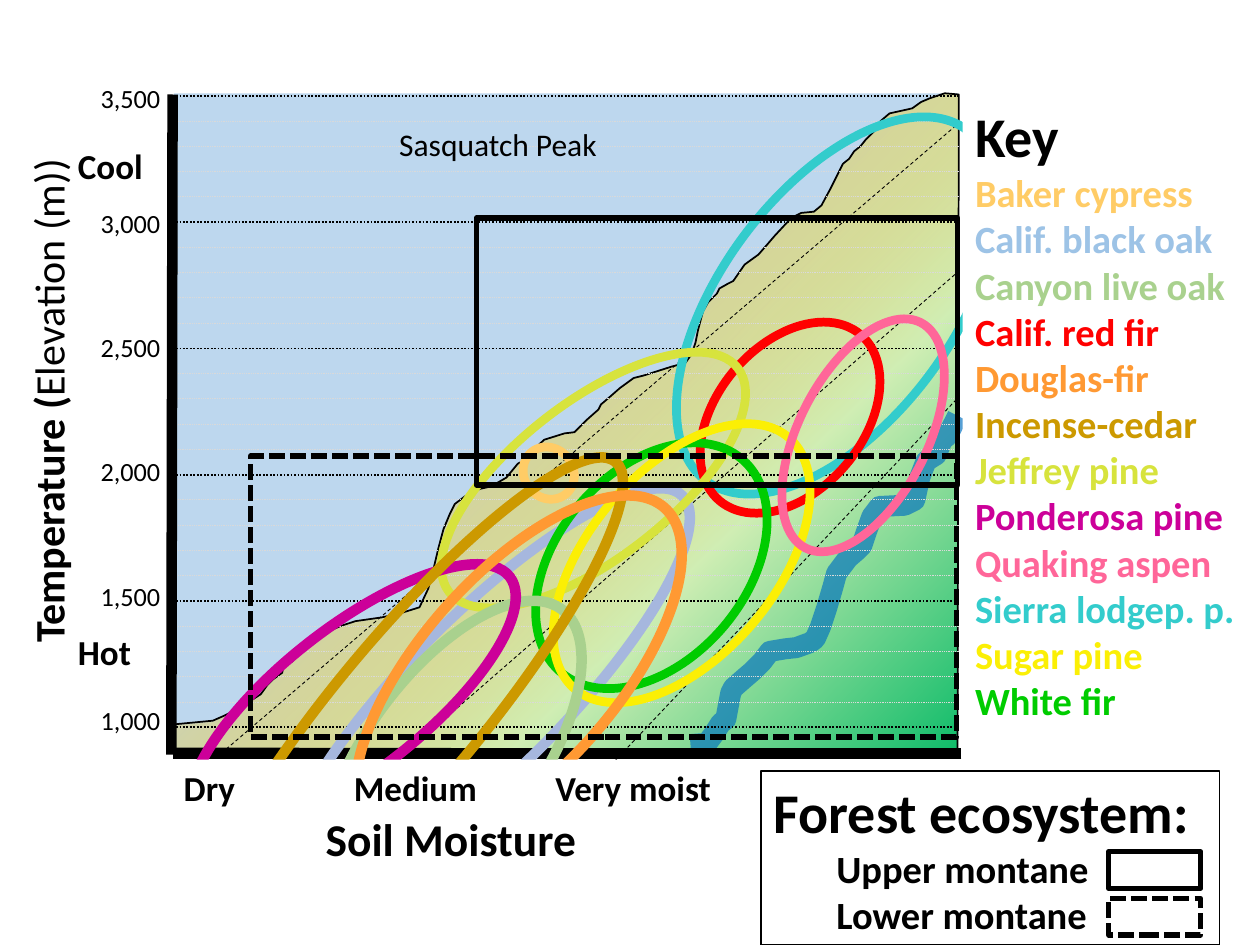
import pptx
import pptx.dml.color
import pptx.enum.dml
import pptx.enum.shapes
import pptx.enum.text
import pptx.oxml.ns
import pptx.util
from lxml import etree

SHAPE = pptx.enum.shapes.MSO_SHAPE
DASH = pptx.enum.dml.MSO_LINE
ALIGN = pptx.enum.text.PP_ALIGN
ANCHOR = pptx.enum.text.MSO_ANCHOR
qn = pptx.oxml.ns.qn

# The slide is a grid of 100 columns and 75 rows
COLUMNS, ROWS = 100, 75
CELL = pptx.util.Inches(10) // COLUMNS
LEFT, RIGHT, TOP, BOTTOM = 13.7, 76.1, 7.6, 59.8


def cells(count):
    return pptx.util.Emu(round(count * CELL))


def color(value):
    return pptx.dml.color.RGBColor.from_string(value)


def set_alpha(element, percent):
    etree.SubElement(element, qn("a:alpha"), val=str(percent * 1000))


class Diagram:
    font, ink, paper = "Calibri", "000000", "FFFFFF"

    def __init__(self, slide):
        self.shapes = slide.shapes

    def style(self, item, fill=None, line=None, width=1, dash=None):
        item.shadow.inherit = False
        if fill:
            item.fill.solid()
            item.fill.fore_color.rgb = color(fill)
        else:
            item.fill.background()
        if line:
            self.stroke(item.line, line, width, dash)
        else:
            item.line.fill.background()
        return item

    def stroke(self, line, value, width, dash=None):
        line.color.rgb = color(value)
        line.width = pptx.util.Pt(width)
        if dash:
            line.dash_style = dash

    def shape(self, kind, left, top, across, down, turn=0, **look):
        item = self.shapes.add_shape(kind, *map(cells, (left, top, across, down)))
        item.rotation = turn
        return self.style(item, **look)

    def line(self, x1, y1, x2, y2, value=ink, width=1, dash=None):
        item = self.shapes.add_connector(
            pptx.enum.shapes.MSO_CONNECTOR.STRAIGHT, *map(cells, (x1, y1, x2, y2)))
        self.stroke(item.line, value, width, dash)
        etree.SubElement(item._element.spPr, qn("a:effectLst"))

    def outline(self, points, close, **look):
        corners = [(cells(x), cells(y)) for x, y in points]
        builder = self.shapes.build_freeform(*corners[0], scale=1.0)
        builder.add_line_segments(corners[1:], close=close)
        return self.style(builder.convert_to_shape(), **look)

    def text(self, left, top, across, down, paras, align=ALIGN.LEFT, anchor=ANCHOR.TOP, turn=0):
        """Each paragraph is (runs, size, color, level); a run is (words, bold)."""
        box = self.shapes.add_textbox(*map(cells, (left, top, across, down)))
        box.rotation = turn
        frame = box.text_frame
        frame.word_wrap = True
        frame.vertical_anchor = anchor
        for index, (runs, size, value, level) in enumerate(paras):
            para = frame.add_paragraph() if index else frame.paragraphs[0]
            para.alignment, para.level = align, level
            para.font.name, para.font.size = self.font, pptx.util.Pt(size)
            para.font.color.rgb = color(value)
            for words, bold in runs:
                span = para.add_run()
                span.text, span.font.bold = words, bold

    def label(self, left, middle, across, words, size, bold=False, align=ALIGN.LEFT):
        """One line of text centred on a row."""
        self.text(left, middle - 2.5, across, 5, [([(words, bold)], size, self.ink, 0)],
                  align, ANCHOR.MIDDLE)


MOUNTAIN = [
    (13.7, 59.4), (13.7, 57.5), (16.9, 57.2), (17.8, 56.8), (18.6, 56.4), (19, 56.2), (19.6, 55.8),
    (20.7, 55.1), (21.2, 54.4), (21.7, 53.9), (22.4, 53.4), (22.5, 52.9), (23.2, 52.5), (23.7, 51.9),
    (24.9, 50.9), (26.1, 50.1), (27, 49.7), (28.2, 49.3), (30.3, 49), (31.7, 48.7), (33.3, 48.2),
    (34, 46.7), (34.4, 45.2), (34.8, 43.5), (35.2, 42), (35.7, 40.8), (36.1, 40), (36.9, 39.4),
    (38.1, 38.8), (39, 38.6), (40.2, 37.9), (41.1, 36.8), (41.5, 36.6), (42.1, 35.9), (43.2, 34.9),
    (44.8, 34.4), (45.6, 34.3), (46.6, 33.3), (47.5, 32.5), (47.7, 32.1), (48.4, 31.5), (49.2, 30.8),
    (50.3, 30), (51.1, 29.8), (53.3, 29.1), (54.4, 28.8), (54.9, 28.1), (55.2, 27.2), (55.4, 26.2),
    (55.8, 24.7), (56.2, 24), (56.9, 23.3), (57.1, 22.9), (57.8, 22.5), (58.2, 22.3), (59.1, 21),
    (60.2, 20.2), (60.9, 19.4), (61.5, 18.7), (62.8, 17.3), (63.6, 16.9), (64.6, 16.8), (65.2, 16.3),
    (65.9, 15), (66.5, 13.8), (66.9, 13), (67.4, 12.6), (67.8, 12), (68.3, 11.6), (68.7, 11.1),
    (69.5, 10.3), (69.9, 9.6), (70.6, 9), (72.4, 8.6), (73.1, 8.1), (73.8, 7.8), (75, 7.4),
    (76.1, 7.5), (76, 59.5)]

RIVER = [
    (54.8, 59.1), (56.1, 59), (56.7, 58.2), (57.2, 57.4), (57.6, 57.1), (58, 55), (58.2, 54.6),
    (59, 53.9), (59.7, 53.3), (60.5, 52.5), (61.1, 51.7), (62.3, 51.5), (63.2, 51.4), (64.3, 51),
    (64.7, 50.7), (65.1, 49.8), (65.6, 48.3), (66.1, 46.6), (66.4, 45.5), (67.3, 44.3), (68, 43.7),
    (68.4, 43.3), (68.8, 42.1), (69.2, 41), (69.8, 40.2), (71.8, 40.1), (72.6, 39.7), (73, 37.9),
    (73.5, 36.6), (74.3, 36.1), (74.8, 34.9), (75.2, 34.6), (75.6, 33.8), (76, 33)]

# Left, top, width, height, turn, colour, line width
TREE_RANGES = [
    (32.4, 32.9, 12.3, 44.2, 44.9, "A6B7DE", 6), (57.2, 6.9, 18.4, 34.7, 36.6, "33CCCC", 5),
    (56.9, 24.5, 11.6, 17.3, 40.4, "FF0000", 5), (40.9, 23.6, 12.4, 29, 52.2, "D7E33D", 5),
    (44.2, 33.8, 15, 22.2, 40.4, "00CC00", 5), (41.4, 35.6, 4.3, 3.9, 51.4, "FFCC66", 5),
    (46.7, 31.6, 14.8, 26.2, 40.4, "FBEF05", 5), (63.4, 24.5, 10.2, 20.1, 27.1, "FF6699", 5),
    (29.1, 45.5, 13.6, 29.2, 36.5, "A9D18E", 6), (22.3, 39.7, 11.4, 31.6, 52, "CC0099", 6),
    (26.6, 30.7, 11.6, 51.4, 39.8, "CC9900", 6), (33.4, 35.9, 15.5, 34.9, 41.6, "FF9933", 6)]

KEY = [
    ("Baker cypress", "FFCC66"), ("Calif. black oak", "9DC3E6"), ("Canyon live oak", "A9D18E"),
    ("Calif. red fir", "FF0000"), ("Douglas-fir", "FF9933"), ("Incense-cedar", "CC9900"),
    ("Jeffrey pine", "D7E33D"), ("Ponderosa pine", "CC0099"), ("Quaking aspen", "FF6699"),
    ("Sierra lodgep. p.", "33CCCC"), ("Sugar pine", "FBEF05"), ("White fir", "00CC00")]


def draw_land(art):
    # Sky, mountain and river
    art.shape(SHAPE.RECTANGLE, 13.8, 7.4, 62.2, 52.1, fill="BDD7EE")
    mountain = art.outline(MOUNTAIN, True, line=art.ink)
    mountain.fill.gradient()
    mountain.fill.gradient_angle = 315
    stops = mountain._element.spPr.find(qn("a:gradFill")).find(qn("a:gsLst"))
    for stop in list(stops):
        stops.remove(stop)
    for place, value, alpha in [(0, "FFD966", 100), (36, "FFC000", 12),
                                (69, "D1EEB4", 100), (100, "10BC6A", 100)]:
        stop = etree.SubElement(stops, qn("a:gs"), pos=str(place * 1000))
        set_alpha(etree.SubElement(stop, qn("a:srgbClr"), val=value), alpha)
    river = art.outline(RIVER, False, line="0070C0", width=12)
    set_alpha(next(river._element.spPr.find(qn("a:ln")).iter(qn("a:srgbClr"))), 66)


def draw_axes(art):
    # Grid lines every 100 m, darker every 500 m
    for step in range(27):
        row = TOP + 2.005 * step
        value, width = (art.ink, 1) if step % 5 == 0 else ("D9D9D9", 0.5)
        art.line(LEFT, row, RIGHT, row, value, width, DASH.ROUND_DOT)
    art.line(RIGHT + 0.2, BOTTOM, LEFT, BOTTOM, width=6)
    art.line(LEFT, TOP - 0.1, LEFT - 0.1, BOTTOM + 0.1, width=6)
    # Axis words
    for step in range(6):
        art.label(5.2, 7.8 + 9.87 * step, 8.5, f"{3500 - 500 * step:,}", 15, align=ALIGN.RIGHT)
    for words, row in [("Cool", 13.1), ("Hot", 51.7)]:
        art.label(5.2, row, 8.5, words, 20, True)
    title = [("Temperature (", True), ("Elevation (m))", False)]
    art.text(-22.1, 29.3, 51.8, 5, [(title, 24, art.ink, 0)], ALIGN.CENTER, turn=270)
    art.label(30.7, 11.4, 20.3, "Sasquatch Peak", 18)
    # Slope lines
    for ends in [(17.2, 60.1, 76.3, 9.6), (31.8, 60.1, 76, 21.6), (48.8, 60.4, 76, 31.6)]:
        art.line(*ends, width=0.5, dash=DASH.DASH)


def draw_panels(art):
    # Soil moisture panel hides the lower ends of the ranges
    art.shape(SHAPE.RECTANGLE, 13.6, 60.3, 44.4, 14.7, fill=art.paper)
    for words, column in [("Dry", 13.6), ("Medium", 27.1), ("Very moist", 43.1)]:
        art.label(column, 62.5, 15, words, 20, True)
    art.label(13.6, 66.5, 44.4, "Soil Moisture", 26, True, ALIGN.CENTER)
    # Species key
    key = (76.4, 7.6, 23.6, 50.8)
    art.shape(SHAPE.RECTANGLE, *key, fill=art.paper)
    art.text(*key, [([("Key", True)], 32, art.ink, 0)]
             + [([(name, True)], 22, value, 0) for name, value in KEY])
    # Forest ecosystem legend
    legend = (60.4, 61.2, 36.4, 13.8)
    art.shape(SHAPE.RECTANGLE, *legend, line=art.ink, width=0.75)
    art.text(*legend, [([("Forest ecosystem:", True)], 32, art.ink, 0)]
             + [([(f"{zone} montane", True)], 22, art.ink, 1) for zone in ("Upper", "Lower")])


def main():
    deck = pptx.Presentation()
    deck.slide_width, deck.slide_height = cells(COLUMNS), cells(ROWS)
    art = Diagram(deck.slides.add_slide(deck.slide_layouts[6]))
    draw_land(art)
    draw_axes(art)
    for *place, value, width in TREE_RANGES:
        art.shape(SHAPE.OVAL, *place, line=value, width=width)
    draw_panels(art)
    # Ecosystem zones and their legend samples
    for frame, dash in [((88, 67.6, 7.3, 2.9), None), ((88, 71.3, 7.3, 2.9), DASH.SQUARE_DOT),
                        ((19.9, 36.2, 56, 22.3), DASH.SQUARE_DOT),
                        ((37.8, 17.3, 38.2, 21.2), None)]:
        art.shape(SHAPE.RECTANGLE, *frame, line=art.ink, width=3, dash=dash)
    deck.save("out.pptx")


if __name__ == "__main__":
    main()
